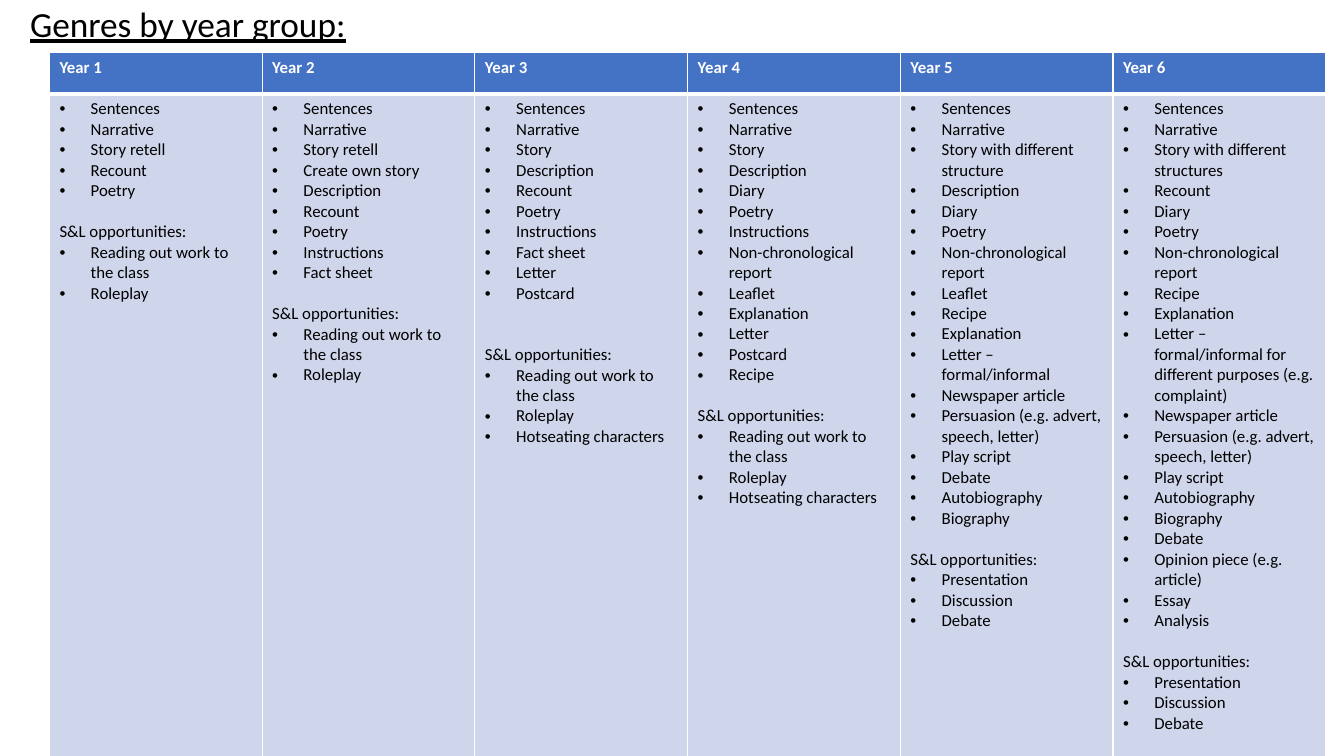
from dataclasses import dataclass

from lxml.etree import SubElement
from pptx import Presentation
from pptx.dml.color import RGBColor
from pptx.enum.text import MSO_ANCHOR
from pptx.oxml.ns import qn
from pptx.slide import Slide
from pptx.table import Table, _Cell
from pptx.text.text import _Paragraph
from pptx.util import Inches, Pt

BLACK = RGBColor(0x00, 0x00, 0x00)
WHITE = RGBColor(0xFF, 0xFF, 0xFF)
HEADER_BLUE = RGBColor(0x44, 0x72, 0xC4)
BODY_BLUE = RGBColor(0xCF, 0xD5, 0xEA)

FONT = "Calibri"
LINE_PITCH = 14.65
BULLET_INDENT = Inches(0.31)
COLUMN_WIDTH = Inches(2.11)
HEADER_HEIGHT = Inches(0.41)
BODY_HEIGHT = Inches(6.6)
THIN, THICK = Pt(1), Pt(3)


@dataclass(frozen=True)
class YearGroup:
    name: str
    genres: list[str]
    speaking: list[str]
    gap_lines: int = 1


INFANT_SPEAKING = ["Reading out work to the class", "Roleplay"]
JUNIOR_SPEAKING = INFANT_SPEAKING + ["Hotseating characters"]
SENIOR_SPEAKING = ["Presentation", "Discussion", "Debate"]

YEAR_GROUPS = [
    YearGroup("Year 1", ["Sentences", "Narrative", "Story retell", "Recount", "Poetry"],
              INFANT_SPEAKING),
    YearGroup("Year 2", ["Sentences", "Narrative", "Story retell", "Create own story",
                         "Description", "Recount", "Poetry", "Instructions", "Fact sheet"],
              INFANT_SPEAKING),
    YearGroup("Year 3", ["Sentences", "Narrative", "Story", "Description", "Recount",
                         "Poetry", "Instructions", "Fact sheet", "Letter", "Postcard"],
              JUNIOR_SPEAKING, gap_lines=2),
    YearGroup("Year 4", ["Sentences", "Narrative", "Story", "Description", "Diary", "Poetry",
                         "Instructions", "Non-chronological report", "Leaflet",
                         "Explanation", "Letter", "Postcard", "Recipe"],
              JUNIOR_SPEAKING),
    YearGroup("Year 5", ["Sentences", "Narrative", "Story with different structure",
                         "Description", "Diary", "Poetry", "Non-chronological report",
                         "Leaflet", "Recipe", "Explanation", "Letter – formal/informal",
                         "Newspaper article", "Persuasion (e.g. advert, speech, letter)",
                         "Play script", "Debate", "Autobiography", "Biography"],
              SENIOR_SPEAKING),
    YearGroup("Year 6", ["Sentences", "Narrative", "Story with different structures",
                         "Recount", "Diary", "Poetry", "Non-chronological report",
                         "Recipe", "Explanation",
                         "Letter – formal/informal for different purposes (e.g. complaint)",
                         "Newspaper article", "Persuasion (e.g. advert, speech, letter)",
                         "Play script", "Autobiography", "Biography", "Debate",
                         "Opinion piece (e.g. article)", "Essay", "Analysis"],
              SENIOR_SPEAKING),
]


def write(p: _Paragraph, text: str, color: RGBColor = BLACK, size: float = 12,
          bold: bool = False) -> None:
    p.text = text
    font = p.runs[0].font
    font.name, font.size, font.bold = FONT, Pt(size), bold
    font.color.rgb = color


def add_bullet(p: _Paragraph) -> None:
    pPr = p._p.get_or_add_pPr()
    pPr.set("marL", str(BULLET_INDENT))
    pPr.set("indent", str(-BULLET_INDENT))
    SubElement(pPr, qn("a:buFont")).set("typeface", "Arial")
    SubElement(pPr, qn("a:buChar")).set("char", "•")


def style_cell(cell: _Cell, fill: RGBColor, top: int, bottom: int) -> None:
    """Draw the white borders, which must precede the fill in the XML."""
    tcPr = cell._tc.get_or_add_tcPr()
    for side, width in (("L", THIN), ("R", THIN), ("T", top), ("B", bottom)):
        line = SubElement(tcPr, qn(f"a:ln{side}"), w=str(width))
        solid = SubElement(line, qn("a:solidFill"))
        SubElement(solid, qn("a:srgbClr")).set("val", str(WHITE))
    cell.fill.solid()
    cell.fill.fore_color.rgb = fill


def fill_year(table: Table, column: int, year: YearGroup) -> None:
    header, body = table.cell(0, column), table.cell(1, column)
    style_cell(header, HEADER_BLUE, THIN, THICK)
    style_cell(body, BODY_BLUE, THICK, THIN)
    write(header.text_frame.paragraphs[0], year.name, WHITE, bold=True)

    tf = body.text_frame
    lines = year.genres + ["S&L opportunities:"] + year.speaking
    for i, text in enumerate(lines):
        p = tf.add_paragraph() if i else tf.paragraphs[0]
        write(p, text)
        if i == len(year.genres):
            p.space_before = Pt(LINE_PITCH * year.gap_lines)
        else:
            add_bullet(p)


def add_title(s: Slide) -> None:
    tf = s.shapes.add_textbox(Inches(0.2), 0, Inches(11.5), Inches(0.52)).text_frame
    tf.word_wrap = True
    tf.vertical_anchor = MSO_ANCHOR.MIDDLE
    p = tf.paragraphs[0]
    p.line_spacing = 0.9
    write(p, "Genres by year group:", size=25.2)
    p.runs[0].font.underline = True


def add_genre_table(s: Slide) -> None:
    count = len(YEAR_GROUPS)
    table = s.shapes.add_table(2, count, Inches(0.49), Inches(0.52), COLUMN_WIDTH * count,
                               HEADER_HEIGHT + BODY_HEIGHT).table
    table.rows[0].height = HEADER_HEIGHT
    table.rows[1].height = BODY_HEIGHT
    for column, year in enumerate(YEAR_GROUPS):
        table.columns[column].width = COLUMN_WIDTH
        fill_year(table, column, year)


def main() -> None:
    prs = Presentation()
    prs.slide_width, prs.slide_height = Inches(13.33), Inches(7.5)
    s = prs.slides.add_slide(prs.slide_layouts[6])
    add_title(s)
    add_genre_table(s)
    prs.save("out.pptx")


if __name__ == "__main__":
    main()
